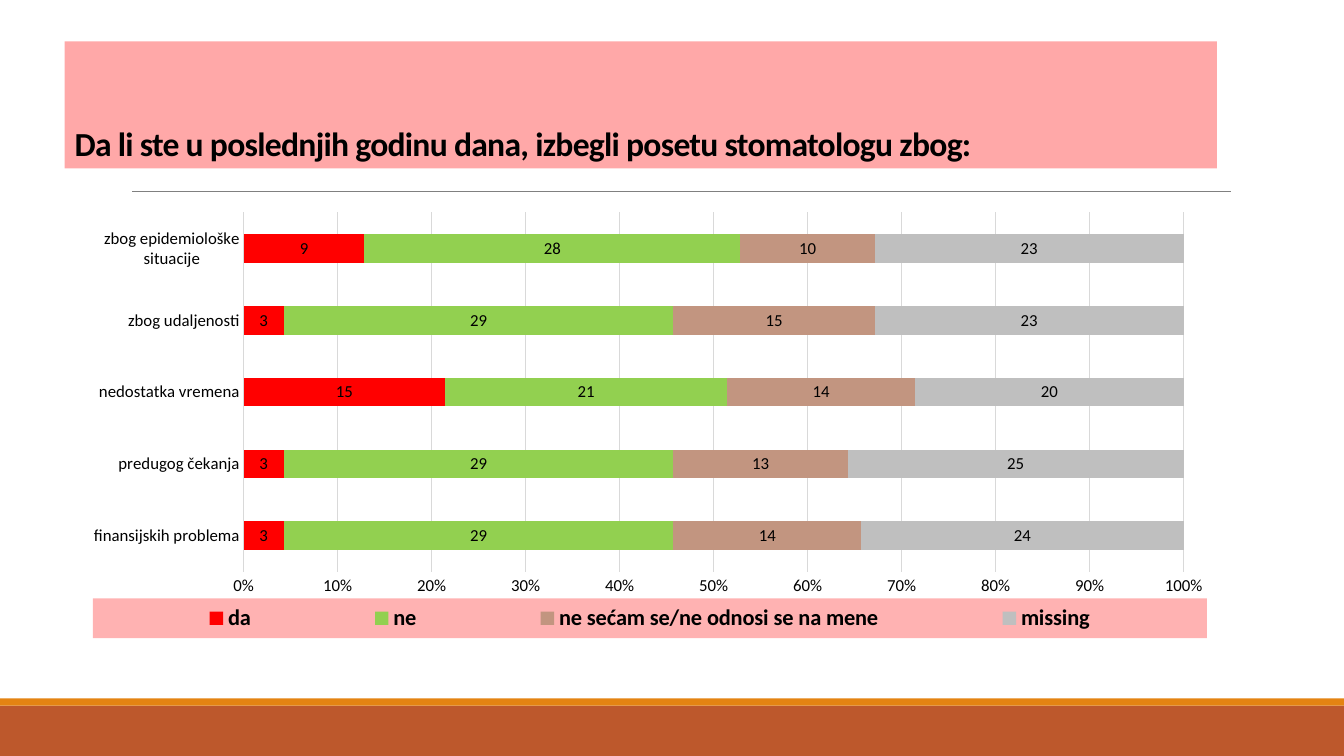
import pptx
import pptx.chart.data
import pptx.dml.color
import pptx.enum.chart
import pptx.enum.shapes
import pptx.enum.text
import pptx.oxml
import pptx.oxml.ns
import pptx.util

RGBColor = pptx.dml.color.RGBColor
RED = RGBColor(0xFF, 0x00, 0x00)
GREEN = RGBColor(0x92, 0xD0, 0x50)
TAN = RGBColor(0xC2, 0x95, 0x80)
SILVER = RGBColor(0xBF, 0xBF, 0xBF)
GRID = RGBColor(0xD9, 0xD9, 0xD9)
GREY = RGBColor(0x80, 0x80, 0x80)
BLACK = RGBColor(0x00, 0x00, 0x00)
RUST = RGBColor(0xBD, 0x58, 0x2C)
ORANGE = RGBColor(0xE4, 0x83, 0x12)

WIDTH, HEIGHT = 13.33, 7.5
CATEGORIES = ["finansijskih problema", "predugog čekanja", "nedostatka vremena",
              "zbog udaljenosti", "zbog epidemiološke situacije"]
ANSWERS = [
    ("da", (3, 3, 15, 3, 9), RED),
    ("ne", (29, 29, 21, 29, 28), GREEN),
    ("ne sećam se/ne odnosi se na mene", (14, 13, 14, 15, 10), TAN),
    ("missing", (24, 25, 20, 23, 23), SILVER),
]
CHART_NS = pptx.oxml.ns.nsdecls("c", "a")


def translucent_fill(color, percent):
    return (f'<a:solidFill {pptx.oxml.ns.nsdecls("a")}><a:srgbClr val="{color}">'
            f'<a:alpha val="{percent * 1000}"/></a:srgbClr></a:solidFill>')


def manual_layout(x, y, w, h, inner=False):
    target = '<c:layoutTarget val="inner"/>' if inner else ""
    return pptx.oxml.parse_xml(
        f'<c:layout {CHART_NS}><c:manualLayout>{target}'
        '<c:xMode val="edge"/><c:yMode val="edge"/>'
        f'<c:x val="{x}"/><c:y val="{y}"/><c:w val="{w}"/><c:h val="{h}"/>'
        '</c:manualLayout></c:layout>')


class SlideBuilder:
    """Places elements by shares of the slide's width and height."""

    font = "Calibri"

    def __init__(self, prs):
        self.prs = prs
        self.s = prs.slides.add_slide(prs.slide_layouts[5])
        for ph in list(self.s.placeholders):
            if ph != self.s.shapes.title and not ph.has_text_frame:
                ph.element.getparent().remove(ph.element)

    def box(self, x, y, w, h):
        return (round(x * self.prs.slide_width), round(y * self.prs.slide_height),
                round(w * self.prs.slide_width), round(h * self.prs.slide_height))

    def style(self, font, size, bold=False):
        font.name, font.size, font.bold = self.font, pptx.util.Pt(size), bold
        font.color.rgb = BLACK

    def band(self, y, h, color):
        sp = self.s.shapes.add_shape(
            pptx.enum.shapes.MSO_SHAPE.RECTANGLE, *self.box(0, y, 1, h))
        sp.shadow.inherit = False
        sp.fill.solid()
        sp.fill.fore_color.rgb = color
        sp.line.fill.background()

    def rule(self, x, y, w):
        left, top, width, _ = self.box(x, y, w, 0)
        line = self.s.shapes.add_connector(
            pptx.enum.shapes.MSO_CONNECTOR.STRAIGHT, left, top, left + width, top)
        line.line.color.rgb = GREY
        line.line.width = pptx.util.Pt(0.5)
        line._element.spPr.append(pptx.oxml.parse_xml(
            f'<a:effectLst {pptx.oxml.ns.nsdecls("a")}/>'))

    def title(self, text, x, y, w, h):
        sp = self.s.shapes.title
        sp.left, sp.top, sp.width, sp.height = self.box(x, y, w, h)
        sp._element.spPr.append(pptx.oxml.parse_xml(translucent_fill(RED, 34)))
        tf = sp.text_frame
        tf.word_wrap = True
        tf.auto_size = pptx.enum.text.MSO_AUTO_SIZE.NONE
        tf.vertical_anchor = pptx.enum.text.MSO_ANCHOR.BOTTOM
        p = tf.paragraphs[0]
        p.alignment = pptx.enum.text.PP_ALIGN.LEFT
        p.line_spacing = 0.85
        r = p.add_run()
        r.text = text
        self.style(r.font, 24, True)
        r._r.get_or_add_rPr().set("spc", "-50")

    def stacked_bars(self, categories, answers, x, y, w, h):
        data = pptx.chart.data.CategoryChartData()
        data.categories = categories
        for name, values, _ in answers:
            data.add_series(name, values)
        chart = self.s.shapes.add_chart(
            pptx.enum.chart.XL_CHART_TYPE.BAR_STACKED_100,
            *self.box(x, y, w, h), data).chart
        chart.has_title = False
        self.style(chart.font, 10)

        # Bars and their values
        plot = chart.plots[0]
        plot.gap_width, plot.overlap = 150, 100
        plot.vary_by_categories = False
        for series, (_, _, color) in zip(plot.series, answers):
            series.format.fill.solid()
            series.format.fill.fore_color.rgb = color
            labels = series.data_labels
            labels.show_value = True
            labels.position = pptx.enum.chart.XL_LABEL_POSITION.CENTER
            self.style(labels.font, 12)

        # Axes
        for axis in (chart.category_axis, chart.value_axis):
            axis.major_tick_mark = axis.minor_tick_mark = pptx.enum.chart.XL_TICK_MARK.NONE
            self.style(axis.tick_labels.font, 12)
        chart.category_axis.has_major_gridlines = False
        chart.value_axis.has_major_gridlines = True
        for line in (chart.category_axis.format.line,
                     chart.value_axis.major_gridlines.format.line):
            line.color.rgb = GRID
            line.width = pptx.util.Pt(0.75)
        chart.value_axis.format.line.fill.background()
        chart.value_axis.major_unit = 0.1
        chart.value_axis.tick_labels.number_format = "0%"
        chart.value_axis.tick_labels.number_format_is_linked = False
        self.legend(chart)

        # Plot area
        area = chart._chartSpace.chart.plotArea
        for old in area.findall(pptx.oxml.ns.qn("c:layout")):
            area.remove(old)
        area.insert(0, manual_layout(0.15, 0.02, 0.81, 0.81, inner=True))

    def legend(self, chart):
        chart.has_legend = True
        legend = chart.legend
        legend.position = pptx.enum.chart.XL_LEGEND_POSITION.BOTTOM
        legend.include_in_layout = False
        self.style(legend.font, 16, True)
        el = legend._element
        for old in el.findall(pptx.oxml.ns.qn("c:layout")):
            el.remove(old)
        el.find(pptx.oxml.ns.qn("c:legendPos")).addnext(
            manual_layout(0.02, 0.89, 0.96, 0.09))
        el.find(pptx.oxml.ns.qn("c:txPr")).addprevious(pptx.oxml.parse_xml(
            f'<c:spPr {CHART_NS}>{translucent_fill(RED, 30)}</c:spPr>'))


def main():
    prs = pptx.Presentation()
    prs.slide_width = pptx.util.Inches(WIDTH)
    prs.slide_height = pptx.util.Inches(HEIGHT)
    page = SlideBuilder(prs)

    # Footer bands and heading rule
    page.band(7 / HEIGHT, 0.5 / HEIGHT, RUST)
    page.band(6.93 / HEIGHT, 0.07 / HEIGHT, ORANGE)
    page.rule(1.31 / WIDTH, 1.9 / HEIGHT, 10.9 / WIDTH)

    # Question and answers
    page.title("Da li ste u poslednjih godinu dana, izbegli posetu stomatologu zbog:",
               0.64 / WIDTH, 0.41 / HEIGHT, 11.43 / WIDTH, 1.26 / HEIGHT)
    page.stacked_bars(CATEGORIES, ANSWERS,
                      0.69 / WIDTH, 2.02 / HEIGHT, 11.51 / WIDTH, 4.4 / HEIGHT)
    prs.save("out.pptx")


if __name__ == "__main__":
    main()
